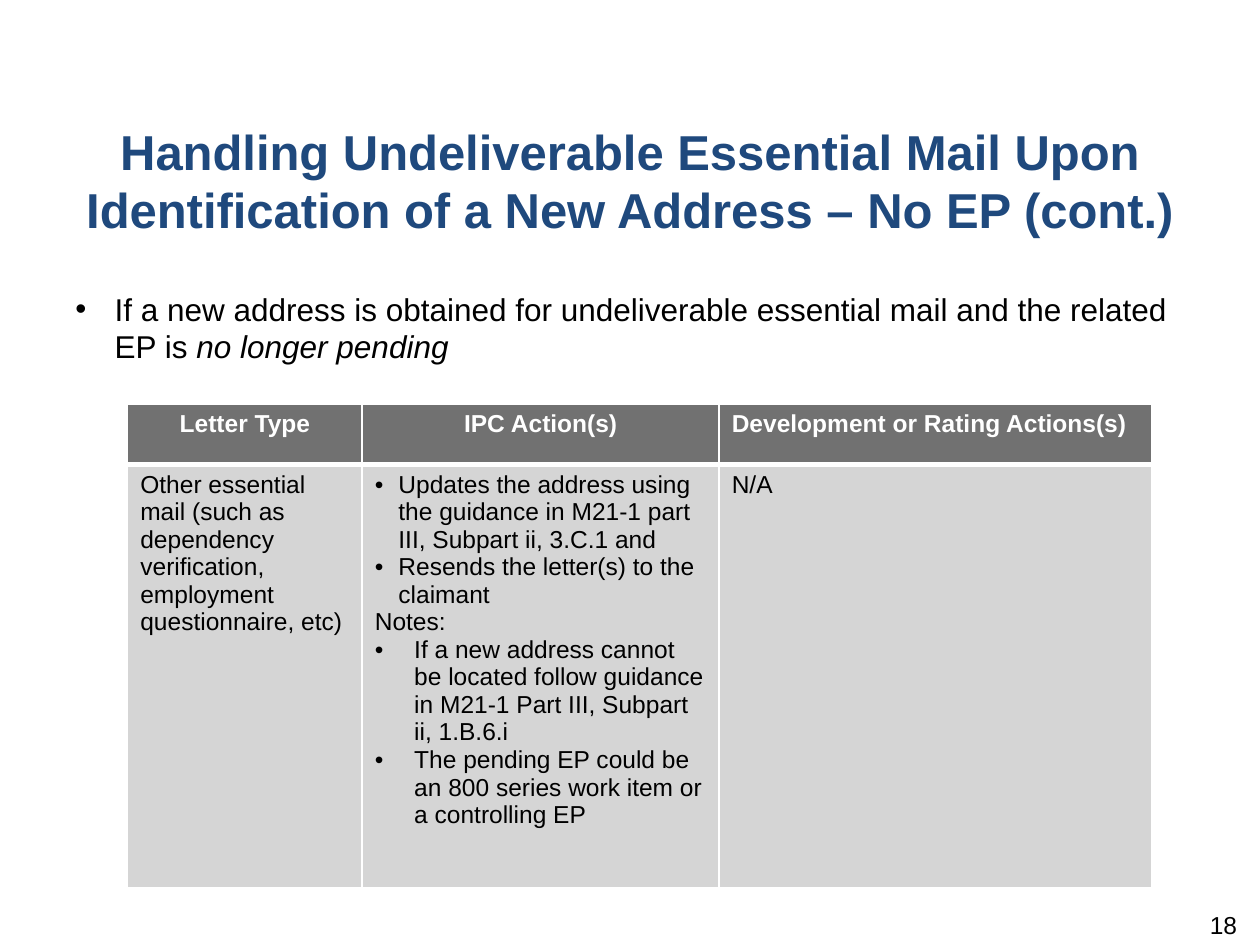
from lxml import etree
from pptx import Presentation
from pptx.dml.color import RGBColor
from pptx.enum.text import MSO_ANCHOR, PP_ALIGN
from pptx.oxml.ns import qn
from pptx.util import Pt

WHITE = RGBColor(0xFF, 0xFF, 0xFF)
BLACK = RGBColor(0x00, 0x00, 0x00)
NAVY = RGBColor(0x1F, 0x49, 0x7D)
HEADER_GRAY = RGBColor(0x71, 0x71, 0x71)
BODY_GRAY = RGBColor(0xD5, 0xD5, 0xD5)

LEFT, CENTER, RIGHT = PP_ALIGN.LEFT, PP_ALIGN.CENTER, PP_ALIGN.RIGHT
TOP, MIDDLE = MSO_ANCHOR.TOP, MSO_ANCHOR.MIDDLE

FONT = "Arial"
TABLE_SIZE = 14
WIDE_INDENT = 22.5
NARROW_INDENT = 13.5

COLUMN_WIDTHS = [134, 204, 247]
ROW_HEIGHTS = [34.5, 242]
HEADERS = [
    ("Letter Type", CENTER),
    ("IPC Action(s)", CENTER),
    ("Development or Rating Actions(s)", LEFT),
]
# Each cell is a list of (text, bullet indent) paragraphs
BODY_CELLS = [
    [("Other essential mail (such as dependency verification, "
      "employment questionnaire, etc)", 0)],
    [
        ("Updates the address using the guidance in M21-1 part III, "
         "Subpart ii, 3.C.1 and", NARROW_INDENT),
        ("Resends the letter(s) to the claimant", NARROW_INDENT),
        ("Notes:", 0),
        ("If a new address cannot be located follow guidance in M21-1 "
         "Part III, Subpart ii, 1.B.6.i", WIDE_INDENT),
        ("The pending EP could be an 800 series work item or a "
         "controlling EP", WIDE_INDENT),
    ],
    [("N/A", 0)],
]


def add_bullet(paragraph, indent):
    properties = paragraph._p.get_or_add_pPr()
    properties.set("marL", str(Pt(indent)))
    properties.set("indent", str(-Pt(indent)))
    etree.SubElement(properties, qn("a:buFont")).set("typeface", FONT)
    etree.SubElement(properties, qn("a:buChar")).set("char", "•")


def add_run(paragraph, text, size, color, bold=False, italic=False):
    run = paragraph.add_run()
    run.text = text
    font = run.font
    font.name, font.size = FONT, Pt(size)
    font.bold, font.italic = bold, italic
    font.color.rgb = color


def add_text_box(slide, left, top, width, height, alignment=LEFT, anchor=TOP):
    """Add a wrapping box and return its frame and first paragraph."""
    box = slide.shapes.add_textbox(Pt(left), Pt(top), Pt(width), Pt(height))
    frame = box.text_frame
    frame.word_wrap = True
    frame.vertical_anchor = anchor
    paragraph = frame.paragraphs[0]
    paragraph.alignment = alignment
    return frame, paragraph


def style_cell(cell, fill, border_widths):
    """Fill a cell and draw its white borders (left, right, top, bottom)."""
    properties = cell._tc.get_or_add_tcPr()
    for side, width in zip("LRTB", border_widths):
        line = etree.SubElement(properties, qn(f"a:ln{side}"), w=str(Pt(width)))
        solid = etree.SubElement(line, qn("a:solidFill"))
        etree.SubElement(solid, qn("a:srgbClr")).set("val", str(WHITE))
    cell.fill.solid()
    cell.fill.fore_color.rgb = fill


def add_mail_table(slide):
    table = slide.shapes.add_table(
        len(ROW_HEIGHTS), len(COLUMN_WIDTHS), Pt(73), Pt(231),
        Pt(sum(COLUMN_WIDTHS)), Pt(sum(ROW_HEIGHTS))).table
    for column, width in zip(table.columns, COLUMN_WIDTHS):
        column.width = Pt(width)
    for row, height in zip(table.rows, ROW_HEIGHTS):
        row.height = Pt(height)

    # Header row
    for cell, (text, alignment) in zip(table.rows[0].cells, HEADERS):
        style_cell(cell, HEADER_GRAY, (1, 1, 1, 3))
        paragraph = cell.text_frame.paragraphs[0]
        paragraph.alignment = alignment
        add_run(paragraph, text, TABLE_SIZE, WHITE, bold=True)

    # Body row
    for cell, entries in zip(table.rows[1].cells, BODY_CELLS):
        style_cell(cell, BODY_GRAY, (1, 1, 3, 1))
        frame = cell.text_frame
        for index, (text, indent) in enumerate(entries):
            paragraph = frame.add_paragraph() if index else frame.paragraphs[0]
            if indent:
                add_bullet(paragraph, indent)
            add_run(paragraph, text, TABLE_SIZE, BLACK)


def main():
    presentation = Presentation()
    presentation.slide_width, presentation.slide_height = Pt(720), Pt(540)
    slide = presentation.slides.add_slide(presentation.slide_layouts[6])

    # Title
    frame, paragraph = add_text_box(slide, 0, 62.5, 720, 86, CENTER, MIDDLE)
    frame.margin_bottom = Pt(9)
    add_run(paragraph, "Handling Undeliverable Essential Mail Upon "
            "Identification of a New Address – No EP (cont.)",
            28, NAVY, bold=True)

    # Slide number
    frame, paragraph = add_text_box(slide, 546, 520, 168, 29, RIGHT)
    frame.margin_top = 0
    add_run(paragraph, "18", 14, BLACK)

    # Introduction
    frame, paragraph = add_text_box(slide, 36, 162, 648, 308)
    add_bullet(paragraph, WIDE_INDENT)
    paragraph.space_after = Pt(6)
    add_run(paragraph, "If a new address is obtained for undeliverable "
            "essential mail and the related EP is ", 18, BLACK)
    add_run(paragraph, "no longer pending", 18, BLACK, italic=True)

    add_mail_table(slide)
    presentation.save("out.pptx")


if __name__ == "__main__":
    main()
